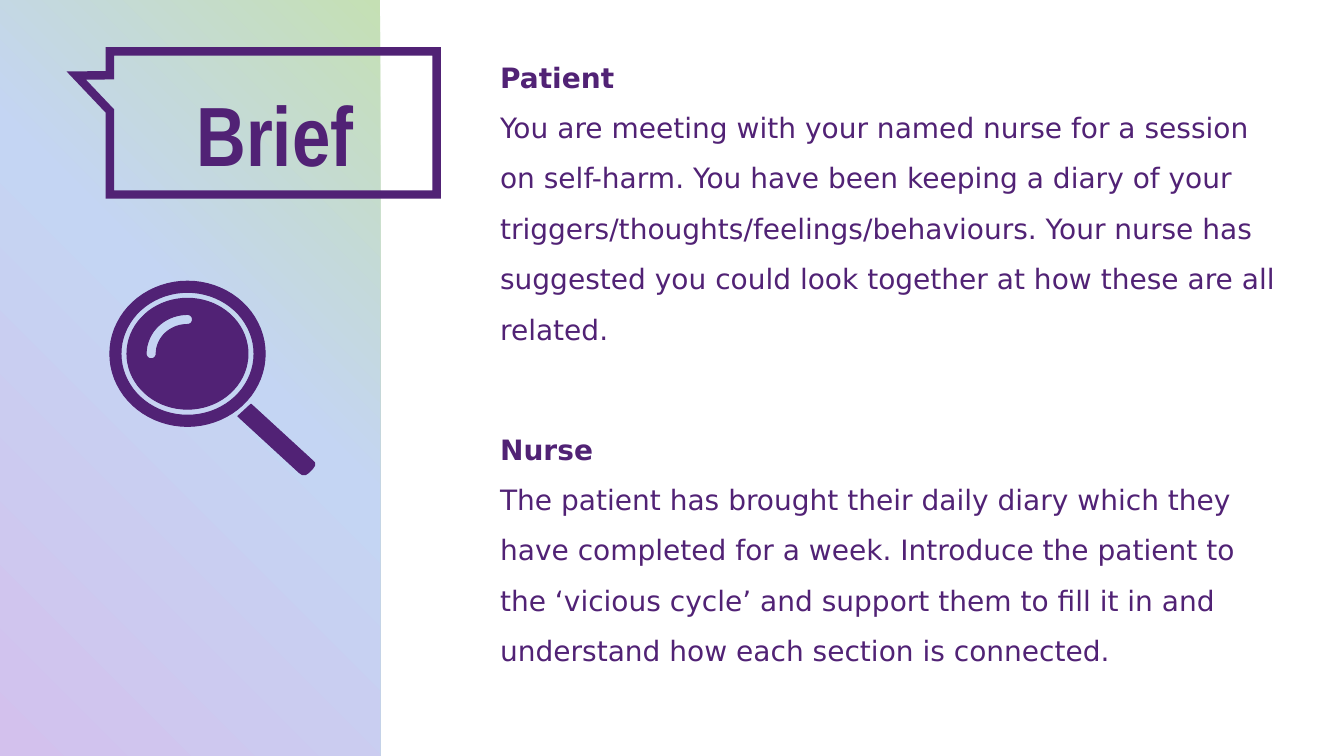
import math

from lxml import etree
from pptx import Presentation
from pptx.dml.color import RGBColor
from pptx.enum import shapes, text
from pptx.oxml import parse_xml
from pptx.oxml.ns import nsdecls, qn
from pptx.util import Inches, Pt

# Content
TITLE = "Brief"
BRIEFS = [
    ("Patient",
     "You are meeting with your named nurse for a session on self-harm. "
     "You have been keeping a diary of your triggers/thoughts/feelings/behaviours. "
     "Your nurse has suggested you could look together at how these are all related."),
    ("Nurse",
     "The patient has brought their daily diary which they have completed for a week. "
     "Introduce the patient to the ‘vicious cycle’ and support them to fill it in and "
     "understand how each section is connected."),
]

# Style
PURPLE = "512275"
PANEL_STOPS = [(0, "D3C1ED"), (56, "C4D5F3"), (100, "C5E0B4")]
TITLE_STYLE = {"name": "Arial Narrow", "size": Pt(60), "bold": True}
HEADING_STYLE = {"name": "DejaVu Sans", "size": Pt(20), "bold": True}
BODY_STYLE = {**HEADING_STYLE, "bold": False}

# Layout, in inches
WIDTH, HEIGHT = 13.33, 7.5
PANEL = (0, 0, 3.77, HEIGHT)
CALLOUT = (1.09, 0.51, 3.24, 1.42)
CALLOUT_TIP = (-0.603, -0.331)
TITLE_BOX = (1.66, 0.57, 2.16, 1.31)
TEXT_LEFT, TEXT_WIDTH = 4.86, 7.92
TEXT_ROWS = [(0.38, 3.06), (4.07, 2.57)]
LENS_CENTER = (1.86, 3.51)
RING_OUTER, RING_INNER, LENS = (0.77, 0.72), (0.66, 0.61), (0.6, 0.55)
SHINE_RADII, SHINE_HALF = (0.36, 0.34), 0.05
HANDLE = [(2.49, 4.01), (2.36, 4.13), (2.97, 4.69), (3, 4.71), (3.03, 4.71),
          (3.06, 4.69), (3.1, 4.65), (3.12, 4.62), (3.12, 4.59), (3.1, 4.57)]


def color(value):
    return RGBColor.from_string(value)


def place(shape, box):
    for name, length in zip(("left", "top", "width", "height"), box):
        setattr(shape, name, Inches(length))


def arc(center, radii, start=0, end=360):
    """Points along an ellipse; angles run clockwise from the right."""
    steps = max(8, abs(end - start) // 5)
    angles = [math.radians(start + (end - start) * i / steps) for i in range(steps + 1)]
    return [(center[0] + radii[0] * math.cos(a), center[1] + radii[1] * math.sin(a))
            for a in angles]


def add_outline(slide, *contours):
    """One purple freeform; contours after the first cut holes."""
    first, *holes = [[(Inches(x), Inches(y)) for x, y in contour] for contour in contours]
    builder = slide.shapes.build_freeform(*first[0])
    builder.add_line_segments(first[1:], close=True)
    for hole in holes:
        builder.move_to(*hole[0])
        builder.add_line_segments(hole[1:], close=True)
    shape = builder.convert_to_shape()
    shape.shadow.inherit = False
    shape.fill.solid()
    shape.fill.fore_color.rgb = color(PURPLE)
    shape.line.color.rgb = color(PURPLE)
    shape.line.width = Pt(0.75)


def add_panel(slide):
    panel = slide.shapes.add_shape(shapes.MSO_SHAPE.RECTANGLE, *map(Inches, PANEL))
    panel.shadow.inherit = False
    panel.line.fill.background()
    stops = "".join(f'<a:gs pos="{pos * 1000}"><a:srgbClr val="{value}"/></a:gs>'
                    for pos, value in PANEL_STOPS)
    gradient = parse_xml(
        f'<a:gradFill {nsdecls("a")} rotWithShape="1"><a:gsLst>{stops}</a:gsLst>'
        '<a:path path="circle"><a:fillToRect t="100000" r="100000"/></a:path></a:gradFill>')
    panel.element.spPr.find(qn("a:prstGeom")).addnext(gradient)


def add_callout(slide):
    callout = slide.shapes.add_shape(
        shapes.MSO_SHAPE.RECTANGULAR_CALLOUT, *map(Inches, CALLOUT))
    for i, value in enumerate(CALLOUT_TIP):
        callout.adjustments[i] = value
    callout.shadow.inherit = False
    callout.fill.background()
    callout.line.color.rgb = color(PURPLE)
    callout.line.width = Pt(6)
    # Sharp corners
    outline = callout.element.spPr.find(qn("a:ln"))
    etree.SubElement(outline, qn("a:miter")).set("lim", "800000")


def add_magnifier(slide):
    x, y = LENS_CENTER
    rx, ry = SHINE_RADII
    half = SHINE_HALF
    cap = (half, half)
    shine = (arc(LENS_CENTER, (rx + half, ry + half), 180, 270)
             + arc((x, y - ry), cap, 270, 450)
             + arc(LENS_CENTER, (rx - half, ry - half), 270, 180)
             + arc((x - rx, y), cap, 0, 180))
    add_outline(slide, arc(LENS_CENTER, RING_OUTER), arc(LENS_CENTER, RING_INNER))
    add_outline(slide, arc(LENS_CENTER, LENS), shine)
    add_outline(slide, HANDLE)


def fill_placeholder(slide, placeholder, box, lines, spacing, indent=0):
    """Move a placeholder to the front and write (text, style) lines in it."""
    slide.shapes.element.append(placeholder.element)
    place(placeholder, box)
    frame = placeholder.text_frame
    frame.text = "\n".join(words for words, _ in lines)
    frame.word_wrap = True
    frame.vertical_anchor = text.MSO_ANCHOR.TOP
    frame.auto_size = text.MSO_AUTO_SIZE.SHAPE_TO_FIT_TEXT
    layout = {"alignment": text.PP_ALIGN.LEFT, "line_spacing": spacing,
              "space_before": Pt(0), "space_after": Pt(0)}
    for paragraph, (_, style) in zip(frame.paragraphs, lines):
        for name, value in layout.items():
            setattr(paragraph, name, value)
        font = paragraph.runs[0].font
        for name, value in style.items():
            setattr(font, name, value)
        font.color.rgb = color(PURPLE)
        properties = paragraph._p.get_or_add_pPr()
        properties.set("marL", str(Inches(indent)))
        properties.set("indent", "0")
        etree.SubElement(properties, qn("a:buNone"))


def main():
    presentation = Presentation()
    presentation.slide_width, presentation.slide_height = Inches(WIDTH), Inches(HEIGHT)
    slide = presentation.slides.add_slide(presentation.slide_layouts[3])
    title, *bodies = slide.placeholders

    # Left panel
    add_panel(slide)
    add_callout(slide)
    fill_placeholder(slide, title, TITLE_BOX, [(TITLE, TITLE_STYLE)], 1.2, indent=0.19)
    add_magnifier(slide)

    # Briefs for each role
    for body, (top, height), (role, brief) in zip(bodies, TEXT_ROWS, BRIEFS):
        fill_placeholder(slide, body, (TEXT_LEFT, top, TEXT_WIDTH, height),
                         [(role, HEADING_STYLE), (brief, BODY_STYLE)], 1.5)

    presentation.save("out.pptx")


if __name__ == "__main__":
    main()
